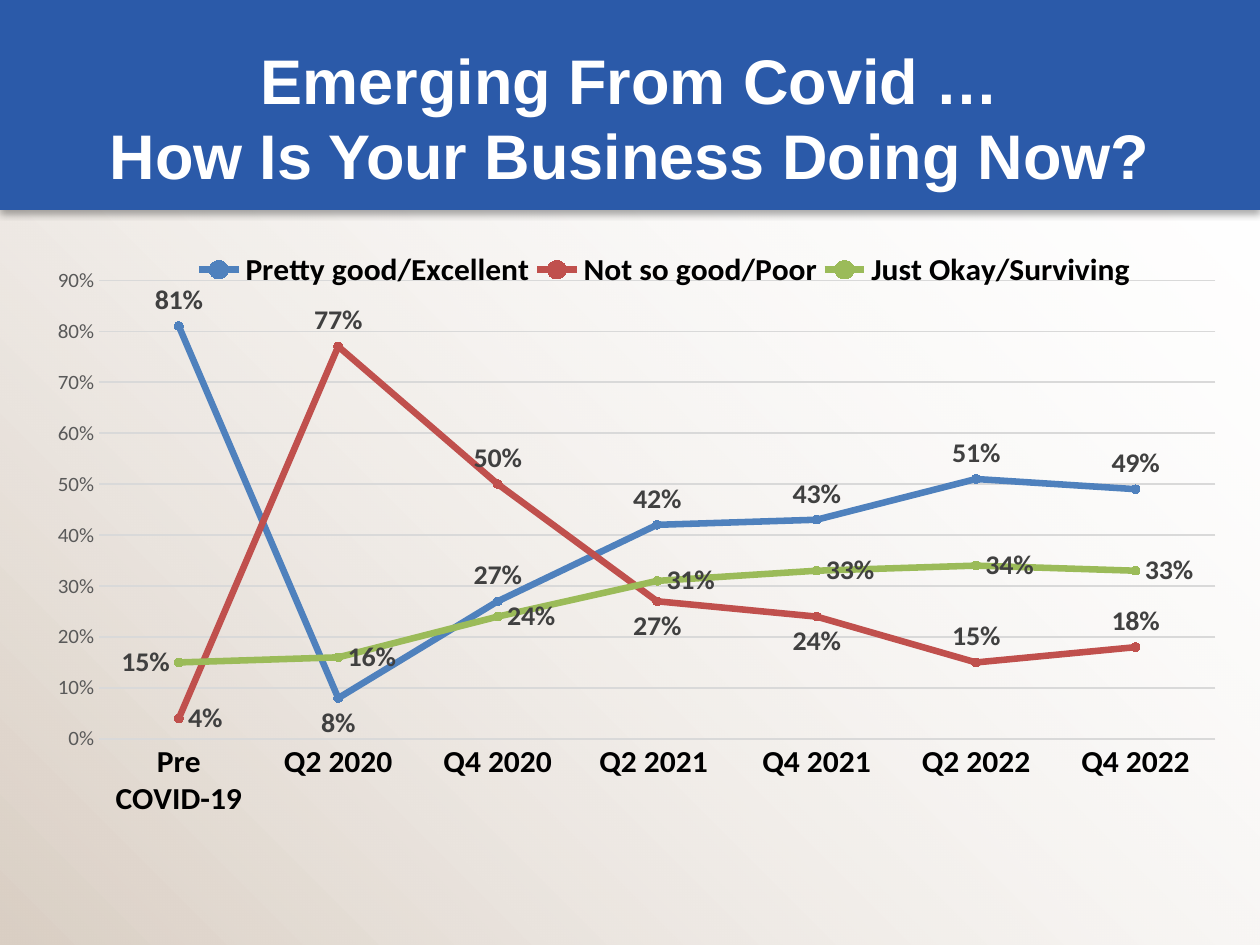
import pptx
import pptx.util
import pptx.chart.data
import pptx.dml.color
import pptx.enum.chart
import pptx.enum.shapes
import pptx.enum.text
import pptx.oxml

Pt = pptx.util.Pt
POS = pptx.enum.chart.XL_LABEL_POSITION
TICK = pptx.enum.chart.XL_TICK_MARK
NS = 'xmlns:{0}="http://schemas.openxmlformats.org/drawingml/2006/{1}"'

QUARTERS = ["Pre COVID-19", "Q2 2020", "Q4 2020", "Q2 2021 ", "Q4 2021", "Q2 2022", "Q4 2022"]
# name, colour, values, label position, label positions of single points
SERIES = [
    ("Pretty good/Excellent", "4F81BD", [0.81, 0.08, 0.27, 0.42, 0.43, 0.51, 0.49],
     POS.ABOVE, {1: POS.BELOW}),
    ("Not so good/Poor", "C0504D", [0.04, 0.77, 0.50, 0.27, 0.24, 0.15, 0.18],
     POS.ABOVE, {0: POS.RIGHT, 3: POS.BELOW, 4: POS.BELOW}),
    ("Just Okay/Surviving", "9BBB59", [0.15, 0.16, 0.24, 0.31, 0.33, 0.34, 0.33],
     POS.RIGHT, {0: POS.LEFT}),
]


def rgb(color):
    return pptx.dml.color.RGBColor.from_string(color)


def xml(text):
    return pptx.oxml.parse_xml(text)


def set_font(font, size, color, bold=False, name="Calibri"):
    font.size, font.bold, font.name = Pt(size), bold, name
    font.color.rgb = rgb(color)


def layout_xml(x, y, w, h, inner=False):
    target = '<c:layoutTarget val="inner"/>' if inner else ""
    return xml(f'<c:layout {NS.format("c", "chart")}><c:manualLayout>{target}'
               '<c:xMode val="edge"/><c:yMode val="edge"/>'
               f'<c:x val="{x}"/><c:y val="{y}"/><c:w val="{w}"/><c:h val="{h}"/>'
               '</c:manualLayout></c:layout>')


class Deck:
    """Holds the style and the current slide; lengths are shares of the slide."""
    band, ink, grid, label = "2B5AA9", "000000", "D9D9D9", "404040"

    def __init__(self, width, height):
        self.prs = pptx.Presentation()
        self.prs.slide_width = pptx.util.Inches(width)
        self.prs.slide_height = pptx.util.Inches(height)
        self.s = self.prs.slides.add_slide(self.prs.slide_layouts[6])

    def box(self, x, y, w, h):
        W, H = self.prs.slide_width, self.prs.slide_height
        return int(x * W), int(y * H), int(w * W), int(h * H)

    def rect(self, *share):
        sp = self.s.shapes.add_shape(pptx.enum.shapes.MSO_SHAPE.RECTANGLE, *self.box(*share))
        sp.shadow.inherit = False
        sp.line.fill.background()
        return sp

    def backdrop(self, start, end):
        fill = self.rect(0, 0, 1, 1).fill
        fill.gradient()
        fill.gradient_angle = 45
        for stop, color, place in zip(fill.gradient_stops, (start, end), (0, 1)):
            stop.color.rgb, stop.position = rgb(color), place
        # the last stop fades out
        last = fill._xPr.xpath(".//a:gs/a:srgbClr")[-1]
        last.append(xml(f'<a:alpha {NS.format("a", "main")} val="0"/>'))

    def header(self, height):
        sp = self.rect(0, 0, 1, height)
        sp.fill.solid()
        sp.fill.fore_color.rgb = rgb(self.band)
        sp._element.spPr.xpath("a:effectLst")[0].append(xml(
            f'<a:outerShdw {NS.format("a", "main")} blurRad="{Pt(4)}" dist="{Pt(2.2)}" '
            'dir="5400000" algn="t" rotWithShape="0"><a:srgbClr val="000000">'
            '<a:alpha val="32000"/></a:srgbClr></a:outerShdw>'))

    def title(self, text, *share):
        tf = self.s.shapes.add_textbox(*self.box(*share)).text_frame
        tf.word_wrap = True
        tf.vertical_anchor = pptx.enum.text.MSO_ANCHOR.MIDDLE
        tf.margin_left = tf.margin_right = pptx.util.Inches(0.05)
        p = tf.paragraphs[0]
        p.text = text
        p.alignment = pptx.enum.text.PP_ALIGN.CENTER
        set_font(p.font, 36, "FFFFFF", True, "Arial")

    def line_chart(self, categories, series, *share):
        data = pptx.chart.data.CategoryChartData(number_format="0%")
        data.categories = categories
        for name, _, values, _, _ in series:
            data.add_series(name, values)
        chart = self.s.shapes.add_chart(
            pptx.enum.chart.XL_CHART_TYPE.LINE_MARKERS, *self.box(*share), data).chart
        chart.has_title = False
        set_font(chart.font, 10, self.ink)
        self.axes(chart)
        for line, (_, color, _, pos, moved) in zip(chart.plots[0].series, series):
            self.series(line, color, pos, moved)
        # plot area
        area = chart._chartSpace.chart.plotArea
        for old in area.xpath("c:layout"):
            area.remove(old)
        area.insert(0, layout_xml(0.064, 0.069, 0.92, 0.825, inner=True))
        # legend along the top edge of the plot
        chart.has_legend = True
        legend = chart.legend
        legend.position = pptx.enum.chart.XL_LEGEND_POSITION.BOTTOM
        legend.include_in_layout = False
        set_font(legend.font, 18, self.ink, True)
        for old in legend._element.xpath("c:layout"):
            legend._element.remove(old)
        legend._element.xpath("c:legendPos")[0].addnext(layout_xml(0.14, 0.01, 0.78, 0.08))

    def axes(self, chart):
        cat, val = chart.category_axis, chart.value_axis
        for axis in (cat, val):
            axis.major_tick_mark = axis.minor_tick_mark = TICK.NONE
        set_font(cat.tick_labels.font, 18, self.ink, True)
        set_font(val.tick_labels.font, 12, "595959")
        val.minimum_scale, val.maximum_scale, val.major_unit = 0, 0.9, 0.1
        val.tick_labels.number_format = "0%"
        val.tick_labels.number_format_is_linked = False
        val.format.line.fill.background()
        for part in (cat, val.major_gridlines):
            part.format.line.width = Pt(0.75)
            part.format.line.color.rgb = rgb(self.grid)

    def series(self, line, color, pos, moved):
        line.smooth = False
        line.format.line.width = Pt(3.75)
        line.format.line.color.rgb = rgb(color)
        line.marker.style = pptx.enum.chart.XL_MARKER_STYLE.CIRCLE
        line.marker.size = 5
        line.marker.format.fill.solid()
        line.marker.format.fill.fore_color.rgb = rgb(color)
        line.marker.format.line.color.rgb = rgb(color)
        labels = line.data_labels
        labels.show_value = True
        labels.number_format, labels.number_format_is_linked = "0%", False
        labels.position = pos
        set_font(labels.font, 16, self.label, True)
        for index, place in moved.items():
            label = line.points[index].data_label
            set_font(label.font, 16, self.label, True)
            label.position = place


def main():
    deck = Deck(10, 7.5)
    # Background and header band
    deck.backdrop("DACFC4", "FFFFFF")
    deck.header(0.2222)
    deck.title("Emerging From Covid …\vHow Is Your Business Doing Now?", 0.05, 0.04, 0.9, 0.167)
    # Survey results
    deck.line_chart(QUARTERS, SERIES, 0.017, 0.256, 0.963, 0.609)
    deck.prs.save("out.pptx")


if __name__ == "__main__":
    main()
